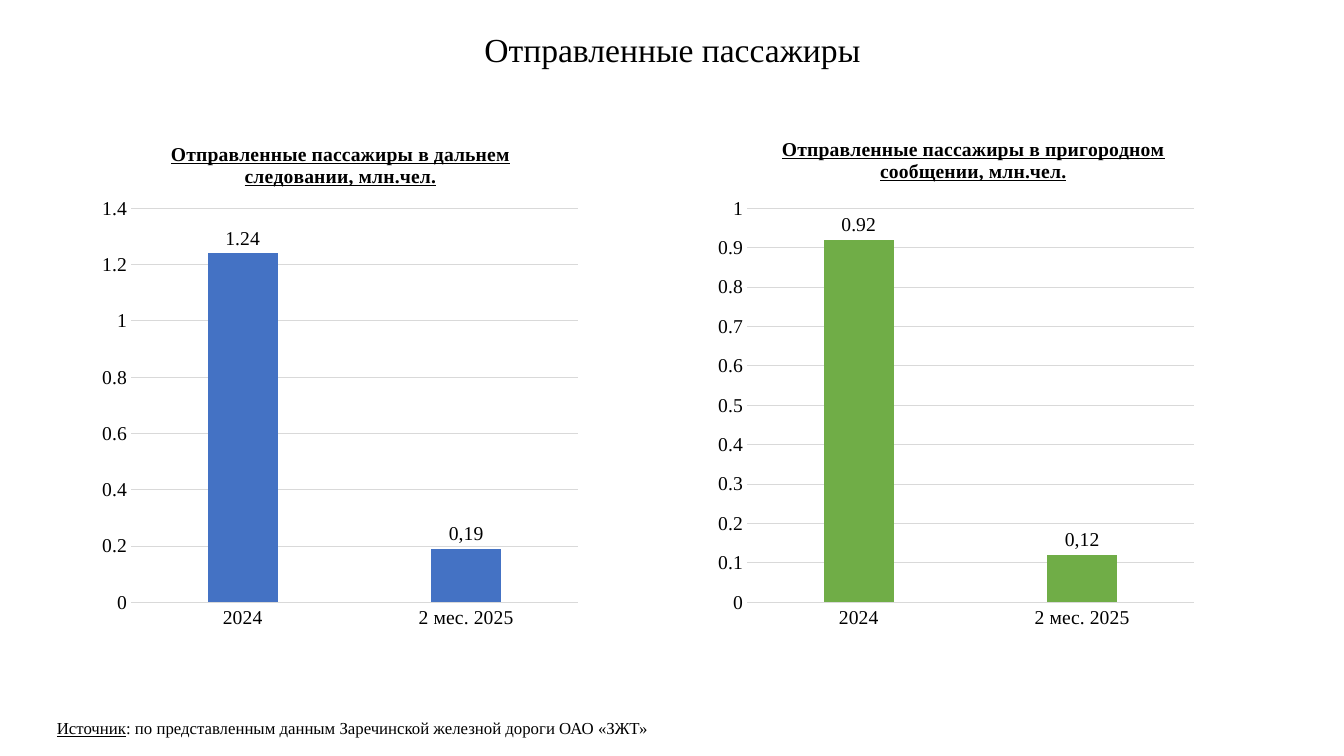
from lxml import etree
from pptx import Presentation
from pptx.chart.data import CategoryChartData
from pptx.dml.color import RGBColor
from pptx.enum.chart import XL_CHART_TYPE as ChartType
from pptx.enum.chart import XL_LABEL_POSITION as LabelPosition
from pptx.enum.chart import XL_TICK_MARK as TickMark
from pptx.enum.text import MSO_ANCHOR as Anchor
from pptx.enum.text import PP_ALIGN as Align
from pptx.oxml.ns import qn
from pptx.util import Pt

EMU_PER_PX = 914400 / 100.8
FONT = "Times New Roman"
BLACK, GRID = "000000", "D9D9D9"
PERIODS = ["2024", "2 мес. 2025"]
CHART_TOP, CHART_WIDTH, CHART_HEIGHT = 117, 495, 522

CHARTS = [
    {
        "left": 93,
        "title": "Отправленные пассажиры в дальнем следовании, млн.чел.",
        "title_at": {"x": 0.15, "y": 0.04},
        "values": [1.24, 0.19],
        "last_label": "0,19",
        "scale": {"minimum_scale": 0, "maximum_scale": 1.4, "major_unit": 0.2},
        "color": "4472C4",
    },
    {
        "left": 709,
        "title": "Отправленные пассажиры в пригородном сообщении, млн.чел.",
        "title_at": {"x": 0.14, "y": 0.03},
        "values": [0.92, 0.12],
        "last_label": "0,12",
        "scale": {"minimum_scale": 0, "maximum_scale": 1, "major_unit": 0.1},
        "color": "70AD47",
    },
]


def px(length):
    return round(length * EMU_PER_PX)


def rgb(color):
    return RGBColor.from_string(color)


def set_all(target, values):
    for name, value in values.items():
        setattr(target, name, value)


def style_font(font, size, **styles):
    set_all(font, {"name": FONT, "size": Pt(size), **styles})
    font.color.rgb = rgb(BLACK)


def add_span(para, text, size, **styles):
    span = para.add_run()
    span.text = text
    style_font(span.font, size, **styles)


def set_layout(parent, index, settings):
    """Give a chart part a manual layout as fractions of the chart."""
    for old in parent.findall(qn("c:layout")):
        parent.remove(old)
    layout = etree.Element(qn("c:layout"))
    manual = etree.SubElement(layout, qn("c:manualLayout"))
    for name, value in settings.items():
        etree.SubElement(manual, qn(f"c:{name}")).set("val", str(value))
    parent.insert(index, layout)


def style_axes(chart, scale):
    for axis in (chart.category_axis, chart.value_axis):
        set_all(axis, {"major_tick_mark": TickMark.NONE,
                       "minor_tick_mark": TickMark.NONE})
        style_font(axis.tick_labels.font, 14)
    lines = chart.value_axis.major_gridlines.format.line
    for line in (chart.category_axis.format.line, lines):
        line.color.rgb = rgb(GRID)
        line.width = Pt(0.75)
    chart.value_axis.format.line.fill.background()
    set_all(chart.value_axis, scale)


def style_series(plot, color, last_label):
    set_all(plot, {"gap_width": 219, "vary_by_categories": False})
    series = plot.series[0]
    series.format.fill.solid()
    series.format.fill.fore_color.rgb = rgb(color)
    labels = series.data_labels
    set_all(labels, {"show_value": True, "position": LabelPosition.OUTSIDE_END})
    style_font(labels.font, 14)
    label = series.points[len(PERIODS) - 1].data_label
    add_span(label.text_frame.paragraphs[0], last_label, 14)
    label.position = LabelPosition.OUTSIDE_END


def add_passenger_chart(page, left, title, title_at, values, last_label, scale, color):
    data = CategoryChartData()
    data.categories = PERIODS
    data.add_series("Series 1", values)
    chart = page.shapes.add_chart(
        ChartType.COLUMN_CLUSTERED, px(left), px(CHART_TOP),
        px(CHART_WIDTH), px(CHART_HEIGHT), data).chart
    chart.has_legend = False
    style_font(chart.font, 14)
    heading = chart.chart_title
    para = heading.text_frame.paragraphs[0]
    add_span(para, title, 14, bold=True, underline=True)
    set_layout(heading.element, 1, {"xMode": "edge", "yMode": "edge", **title_at})
    plot_area = chart.element.find(f".//{qn('c:plotArea')}")
    set_layout(plot_area, 0, {
        "layoutTarget": "inner", "xMode": "edge", "yMode": "edge",
        "x": 0.077, "y": 0.175, "w": 0.903, "h": 0.755})
    style_axes(chart, scale)
    style_series(chart.plots[0], color, last_label)


def fill_title(page, text):
    title = page.shapes.title
    set_all(title, {"left": px(93), "top": px(12),
                    "width": px(1159), "height": px(80)})
    title.text_frame.vertical_anchor = Anchor.MIDDLE
    para = title.text_frame.paragraphs[0]
    set_all(para, {"alignment": Align.CENTER, "line_spacing": 0.9})
    add_span(para, text, 24)


def add_source_line(page, label, text):
    box = page.shapes.add_textbox(px(47), px(713), px(1134), px(30))
    box.text_frame.word_wrap = True
    para = box.text_frame.paragraphs[0]
    add_span(para, label, 12, underline=True)
    add_span(para, text, 12)


def main():
    deck = Presentation()
    set_all(deck, {"slide_width": px(1344), "slide_height": px(756)})
    page = deck.slides.add_slide(deck.slide_layouts.get_by_name("Title Only"))
    fill_title(page, "Отправленные пассажиры")
    for chart in CHARTS:
        add_passenger_chart(page, **chart)
    add_source_line(
        page, "Источник",
        ": по представленным данным Заречинской железной дороги ОАО «ЗЖТ»")
    deck.save("out.pptx")


if __name__ == "__main__":
    main()
